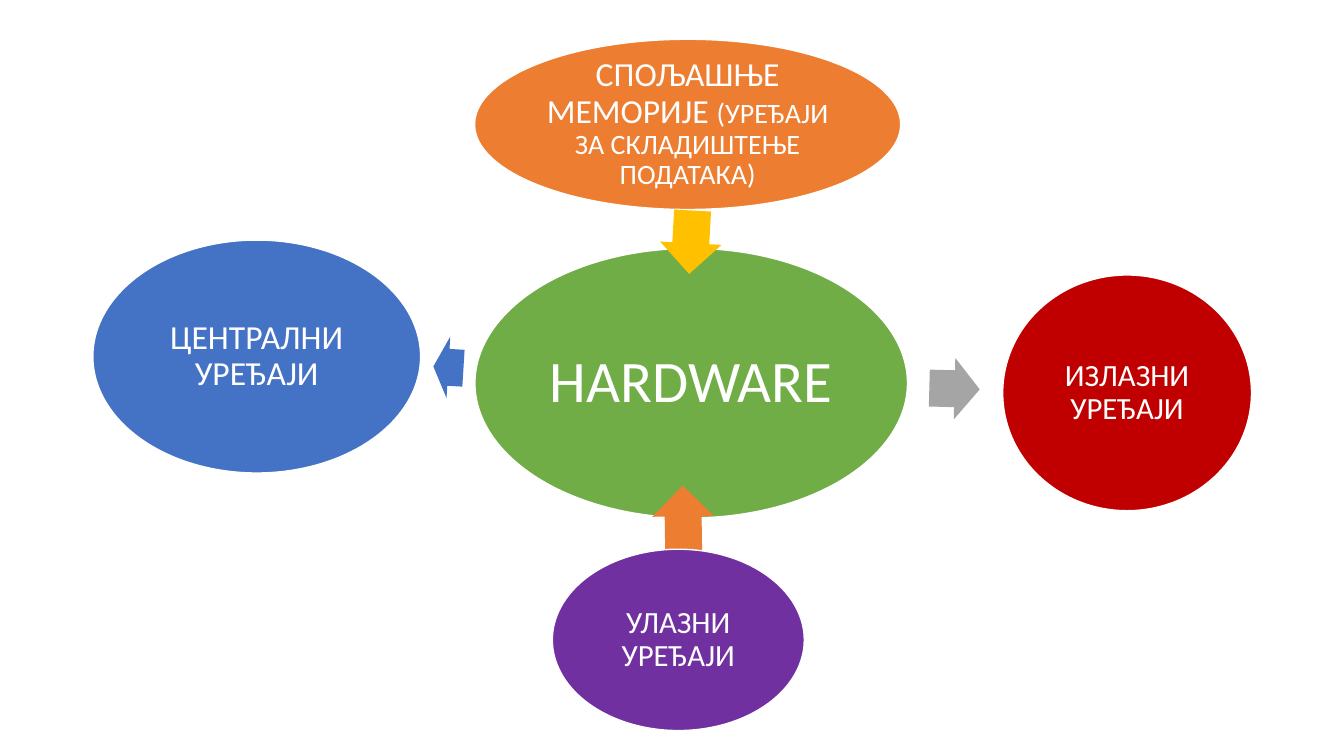
from dataclasses import dataclass

from pptx import Presentation
from pptx.dml.color import RGBColor
from pptx.enum.shapes import MSO_SHAPE as Preset
from pptx.enum.text import MSO_ANCHOR as Anchor, PP_ALIGN as Align
from pptx.util import Cm, Pt


@dataclass(frozen=True)
class Theme:
    """Colours, font and type sizes of the slide."""
    font: str = "Calibri"
    white: str = "FFFFFF"
    green: str = "70AD47"
    orange: str = "ED7D31"
    grey: str = "A5A5A5"
    red: str = "C00000"
    gold: str = "FFC000"
    purple: str = "7030A0"
    blue: str = "4472C4"
    hub: int = 42
    large: int = 24
    medium: int = 22
    small: int = 20


THEME = Theme()


def add_filled(page, preset, place, color):
    """Add a flat shape at left, top, width, height in centimetres."""
    shape = page.shapes.add_shape(preset, *(Cm(length) for length in place))
    shape.shadow.inherit = False
    shape.fill.solid()
    shape.fill.fore_color.rgb = RGBColor.from_string(color)
    shape.line.fill.background()
    return shape


def add_span(para, text, size, color=THEME.white, font=THEME.font):
    """Append formatted text to a paragraph."""
    span = para.add_run()
    span.text = text
    span.font.name = font
    span.font.size = Pt(size)
    span.font.color.rgb = RGBColor.from_string(color)


def add_bubble(page, place, color, spans, outline=1, inset=0.08):
    """Add an outlined ellipse with centred text made of (text, size) spans."""
    bubble = add_filled(page, Preset.OVAL, place, color)
    bubble.line.color.rgb = RGBColor.from_string(THEME.white)
    bubble.line.width = Pt(outline)
    box = bubble.text_frame
    box.word_wrap = True
    box.vertical_anchor = Anchor.MIDDLE
    box.margin_left = box.margin_right = Cm(inset)
    box.margin_top = box.margin_bottom = Cm(inset)
    para = box.paragraphs[0]
    para.alignment = Align.CENTER
    para.line_spacing = 0.9
    for text, size in spans:
        add_span(para, text, size)


def add_arrow(page, place, color, rotation):
    """Add a block arrow turned clockwise from pointing right."""
    arrow = add_filled(page, Preset.RIGHT_ARROW, place, color)
    arrow.adjustments[0] = 0.6
    arrow.adjustments[1] = 0.5
    arrow.rotation = rotation


def main():
    """Build the hardware diagram."""
    deck = Presentation()
    deck.slide_width, deck.slide_height = Cm(33.87), Cm(19.05)
    page = deck.slides.add_slide(deck.slide_layouts[6])

    add_bubble(page, (11.96, 6.25, 10.92, 6.81), THEME.green,
               [("HARDWARE", THEME.hub)], outline=1.5, inset=0.15)

    add_arrow(page, (16.23, 12.45, 1.98, 1.55), THEME.orange, 269.2)
    add_bubble(page, (11.96, 0.99, 10.74, 4.29), THEME.orange,
               [("СПОЉАШЊЕ МЕМОРИЈЕ ", THEME.large),
                ("(УРЕЂАЈИ ЗА СКЛАДИШТЕЊЕ ПОДАТАКА)", THEME.small)])

    add_arrow(page, (23.42, 9.02, 1.27, 1.55), THEME.grey, 1.5)
    add_bubble(page, (25.27, 6.93, 6.27, 5.94), THEME.red,
               [("ИЗЛАЗНИ УРЕЂАЈИ", THEME.medium)])

    add_arrow(page, (16.61, 5.33, 1.6, 1.55), THEME.gold, 93.1)
    add_bubble(page, (13.92, 13.84, 6.35, 4.57), THEME.purple,
               [("УЛАЗНИ УРЕЂАЈИ", THEME.medium)])

    add_arrow(page, (10.92, 8.48, 0.76, 1.55), THEME.blue, 183.5)
    add_bubble(page, (2.34, 6.05, 8.26, 5.87), THEME.blue,
               [("ЦЕНТРАЛНИ УРЕЂАЈИ", THEME.large)])

    deck.save("out.pptx")


if __name__ == "__main__":
    main()
